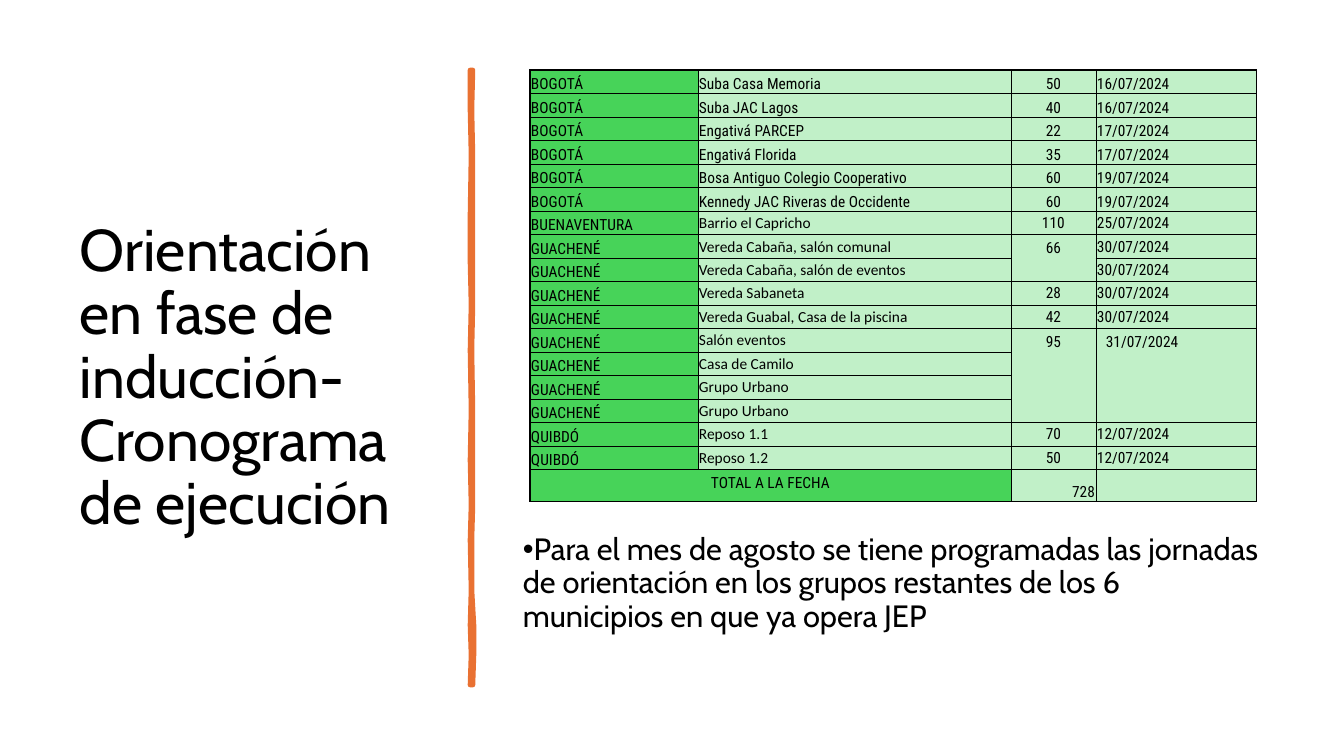
from lxml import etree
from pptx import Presentation
from pptx.dml.color import RGBColor
from pptx.enum.text import MSO_ANCHOR, PP_ALIGN
from pptx.oxml.ns import qn
from pptx.util import Pt

EMU_PER_PX = 914400 / 100.8
LEFT, CENTER, RIGHT = PP_ALIGN.LEFT, PP_ALIGN.CENTER, PP_ALIGN.RIGHT
TOP, MIDDLE, BOTTOM = MSO_ANCHOR.TOP, MSO_ANCHOR.MIDDLE, MSO_ANCHOR.BOTTOM
COLORS = {
    "text": "000000",
    "border": "000000",
    "divider": "E97132",
    "strong": "47D359",
    "soft": "C1F0C8",
}
HEADING_FONT = "Cabin"
TABLE_FONT = "Roboto Condensed"
PLACE_FONT = "Calibri"
TABLE_SIZE = 11

COLUMN_WIDTHS = [168, 313, 85, 161]
SESSION_ROWS_HEIGHT = 400
TOTAL_ROW_HEIGHT = 32
FIRST_MIDDLE_ROW = 6
SESSIONS = [
    ("BOGOTÁ", "Suba Casa Memoria", "50", "16/07/2024"),
    ("BOGOTÁ", "Suba JAC Lagos", "40", "16/07/2024"),
    ("BOGOTÁ", "Engativá PARCEP", "22", "17/07/2024"),
    ("BOGOTÁ", "Engativá Florida", "35", "17/07/2024"),
    ("BOGOTÁ", "Bosa Antiguo Colegio Cooperativo", "60", "19/07/2024"),
    ("BOGOTÁ", "Kennedy JAC Riveras de Occidente", "60", "19/07/2024"),
    ("BUENAVENTURA", "Barrio el Capricho", "110", "25/07/2024"),
    ("GUACHENÉ", "Vereda Cabaña, salón comunal", "66", "30/07/2024"),
    ("GUACHENÉ", "Vereda Cabaña, salón de eventos", "", "30/07/2024"),
    ("GUACHENÉ", "Vereda Sabaneta", "28", "30/07/2024"),
    ("GUACHENÉ", "Vereda Guabal, Casa de la piscina", "42", "30/07/2024"),
    ("GUACHENÉ", "Salón eventos", "95", "31/07/2024"),
    ("GUACHENÉ", "Casa de Camilo", "", ""),
    ("GUACHENÉ", "Grupo Urbano", "", ""),
    ("GUACHENÉ", "Grupo Urbano", "", ""),
    ("QUIBDÓ", "Reposo 1.1", "70", "12/07/2024"),
    ("QUIBDÓ", "Reposo 1.2", "50", "12/07/2024"),
]
TOTAL = ("TOTAL A LA FECHA", "", "728", "")
MERGES = [((7, 2), (8, 2)), ((11, 2), (14, 2)), ((11, 3), (14, 3)), ((17, 0), (17, 1))]

DIVIDER_EDGES = [
    (70, 470, 473), (110, 470, 472), (155, 471, 473), (215, 470, 473),
    (262, 470, 473), (305, 471, 473), (350, 470, 472), (410, 471, 473),
    (460, 470, 473), (505, 471, 473), (540, 470, 472), (590, 471, 472),
    (625, 470, 474), (655, 471, 474), (685, 470, 473),
]


def px(value):
    return round(value * EMU_PER_PX)


def color(name):
    return RGBColor.from_string(COLORS[name])


def write_text(frame, text, *, font, size, align=LEFT, line_spacing=None, space_before=None):
    frame.word_wrap = True
    paragraph = frame.paragraphs[0]
    paragraph.alignment = align
    if line_spacing:
        paragraph.line_spacing = line_spacing
    if space_before:
        paragraph.space_before = Pt(space_before)
    if text:
        run = paragraph.add_run()
        run.text = text
        run.font.name = font
        run.font.size = Pt(size)
        run.font.color.rgb = color("text")
    else:
        paragraph._p.get_or_add_endParaRPr().set("sz", str(size * 100))
    return paragraph


def add_text(slide, box, text, *, anchor=TOP, **text_format):
    frame = slide.shapes.add_textbox(*map(px, box)).text_frame
    frame.vertical_anchor = anchor
    return write_text(frame, text, font=HEADING_FONT, line_spacing=0.9, **text_format)


def add_bullet(paragraph, indent):
    properties = paragraph._p.get_or_add_pPr()
    properties.set("marL", "0")
    properties.set("indent", str(px(indent)))
    etree.SubElement(properties, qn("a:buFont")).set("typeface", "Arial")
    etree.SubElement(properties, qn("a:buChar")).set("char", "•")


def add_divider(slide):
    left_edge = [(left, y) for y, left, right in DIVIDER_EDGES]
    right_edge = [(right, y) for y, left, right in reversed(DIVIDER_EDGES)]
    start, *others = left_edge + right_edge
    builder = slide.shapes.build_freeform(*start, scale=EMU_PER_PX)
    builder.add_line_segments(others, close=True)
    shape = builder.convert_to_shape()
    shape.shadow.inherit = False
    shape.fill.solid()
    shape.fill.fore_color.rgb = color("divider")
    shape.line.color.rgb = color("divider")
    shape.line.width = Pt(3.25)


def set_borders(cell, widths):
    properties = cell._tc.get_or_add_tcPr()
    for side, width in widths.items():
        line = etree.SubElement(properties, qn(f"a:ln{side}"), w=str(Pt(width)))
        fill = etree.SubElement(line, qn("a:solidFill"))
        etree.SubElement(fill, qn("a:srgbClr")).set("val", COLORS["border"])


def format_cell(cell, text, *, fill, borders, anchor, align, font, roomy):
    set_borders(cell, borders)
    cell.fill.solid()
    cell.fill.fore_color.rgb = color(fill)
    cell.vertical_anchor = anchor
    side, top, bottom = (10, 5, 5) if roomy else (1, 1, 0)
    cell.margin_left = cell.margin_right = px(side)
    cell.margin_top, cell.margin_bottom = px(top), px(bottom)
    write_text(cell.text_frame, text, font=font, size=TABLE_SIZE, align=align)


def add_schedule(slide, left, top):
    records = SESSIONS + [TOTAL]
    last_row, last_column = len(SESSIONS), len(COLUMN_WIDTHS) - 1
    frame = slide.shapes.add_table(
        len(records), len(COLUMN_WIDTHS), px(left), px(top),
        px(sum(COLUMN_WIDTHS)), px(SESSION_ROWS_HEIGHT + TOTAL_ROW_HEIGHT))
    table = frame.table
    table.first_row = table.horz_banding = False
    for column, width in zip(table.columns, COLUMN_WIDTHS):
        column.width = px(width)
    for row in table.rows:
        row.height = px(SESSION_ROWS_HEIGHT / len(SESSIONS))
    table.rows[last_row].height = px(TOTAL_ROW_HEIGHT)
    for start, end in MERGES:
        table.cell(*start).merge(table.cell(*end))

    merge_starts = [start for start, end in MERGES]
    for row, record in enumerate(records):
        is_total = row == last_row
        for column, text in enumerate(record):
            roomy = (row, column) in merge_starts
            in_middle = FIRST_MIDDLE_ROW <= row < last_row and column > 0
            align = CENTER if column == 2 or (is_total and column == 0) else LEFT
            format_cell(
                table.cell(row, column), text,
                fill="strong" if column == 0 or (is_total and column == 1) else "soft",
                borders={
                    "L": 1 if column == 0 else 0.5,
                    "R": 1 if column == last_column else 0.5,
                    "T": 1 if row == 0 else 0.5,
                    "B": 1 if is_total else 0.5,
                },
                anchor=TOP if roomy else MIDDLE if in_middle else BOTTOM,
                align=RIGHT if is_total and column == 2 else align,
                font=PLACE_FONT if in_middle and column == 1 else TABLE_FONT,
                roomy=roomy)


def main():
    presentation = Presentation()
    presentation.slide_width, presentation.slide_height = px(1344), px(756)
    slide = presentation.slides.add_slide(presentation.slide_layouts[6])
    add_text(slide, (70, 71, 377, 616),
             "Orientación en fase de inducción- Cronograma de ejecución",
             size=42, anchor=MIDDLE)
    add_divider(slide)
    note = add_text(
        slide, (513, 529, 760, 157),
        "Para el mes de agosto se tiene programadas las jornadas de orientación "
        "en los grupos restantes de los 6 municipios en que ya opera JEP",
        size=22, space_before=6)
    add_bullet(note, -25)
    add_schedule(slide, 530, 70)
    presentation.save("out.pptx")


if __name__ == "__main__":
    main()
